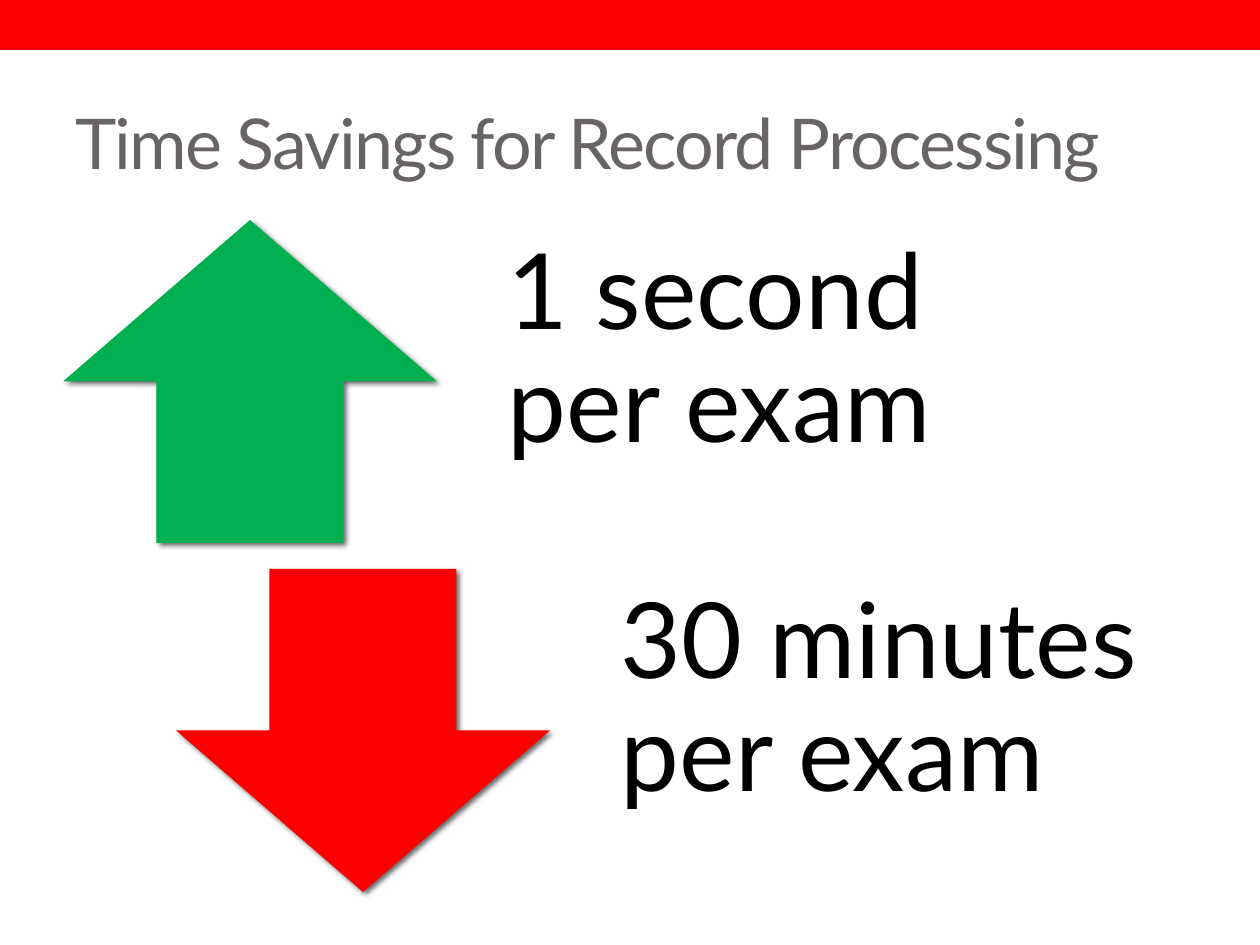
from lxml import etree
from pptx import Presentation
from pptx.dml.color import RGBColor
from pptx.enum.shapes import MSO_SHAPE
from pptx.enum.text import MSO_ANCHOR
from pptx.oxml.ns import qn
from pptx.util import Emu, Pt

RECT, UP, DOWN = MSO_SHAPE.RECTANGLE, MSO_SHAPE.UP_ARROW, MSO_SHAPE.DOWN_ARROW
MIDDLE = MSO_ANCHOR.MIDDLE

# Content
TITLE = "Time Savings for Record Processing"
SAVINGS = [
    (UP, "green", "1 second per exam"),
    (DOWN, "red", "30 minutes per exam"),
]
COLORS = {"red": "FF0000", "green": "00B050", "grey": "696464", "black": "000000"}
FONT = "Lato"

# Layout in px
SLIDE_W, SLIDE_H = 1260, 945
BANNER_H = 50
TITLE_BOX = (63, 73, 1134, 136)
ARROW_LEFT, ROW_TOP = 63, 220
ARROW_W, ROW_H = 374, 323
STEP_X, STEP_Y = 113, 349
LABEL_OFFSET, LABEL_W = 386, 635
LABEL_INSET = 59


def px(value):
    return Emu(round(value * 914400 / 126))


def add_block(slide, kind, box, color):
    block = slide.shapes.add_shape(kind, *map(px, box))
    block.shadow.inherit = False
    block.fill.solid()
    block.fill.fore_color.rgb = RGBColor.from_string(COLORS[color])
    block.line.fill.background()
    return block


def add_shadow(block):
    effects = block._element.spPr.find(qn("a:effectLst"))
    shadow = etree.SubElement(
        effects, qn("a:outerShdw"), blurRad=str(Pt(3)), dist=str(Pt(2)),
        dir=str(45 * 60000), algn="ctr", rotWithShape="0")
    tint = etree.SubElement(shadow, qn("a:srgbClr"), val=COLORS["black"])
    etree.SubElement(tint, qn("a:alpha"), val="60000")


def add_text(slide, box, text, size, color):
    frame = slide.shapes.add_textbox(*map(px, box)).text_frame
    frame.word_wrap = True
    frame.vertical_anchor = MIDDLE
    run = frame.paragraphs[0].add_run()
    run.text = text
    run.font.name = FONT
    run.font.size = Pt(size)
    run.font.color.rgb = RGBColor.from_string(COLORS[color])
    return frame


def main():
    prs = Presentation()
    prs.slide_width, prs.slide_height = px(SLIDE_W), px(SLIDE_H)
    slide = prs.slides.add_slide(prs.slide_layouts[6])

    # Banner and title
    add_block(slide, RECT, (0, 0, SLIDE_W, BANNER_H), "red")
    title = add_text(slide, TITLE_BOX, TITLE, 40, "grey")
    title.paragraphs[0].runs[0].font._element.set("spc", "-100")

    # Staggered arrows, each with its label
    for row, (arrow_kind, color, saving) in enumerate(SAVINGS):
        left, top = ARROW_LEFT + row * STEP_X, ROW_TOP + row * STEP_Y
        arrow = add_block(slide, arrow_kind, (left, top, ARROW_W, ROW_H), color)
        add_shadow(arrow)
        label = add_text(slide, (left + LABEL_OFFSET, top, LABEL_W, ROW_H),
                         saving, 60, "black")
        label.margin_left = label.margin_right = label.margin_bottom = px(LABEL_INSET)
        label.margin_top = 0
        label.paragraphs[0].line_spacing = 0.9

    prs.save("out.pptx")


if __name__ == "__main__":
    main()
